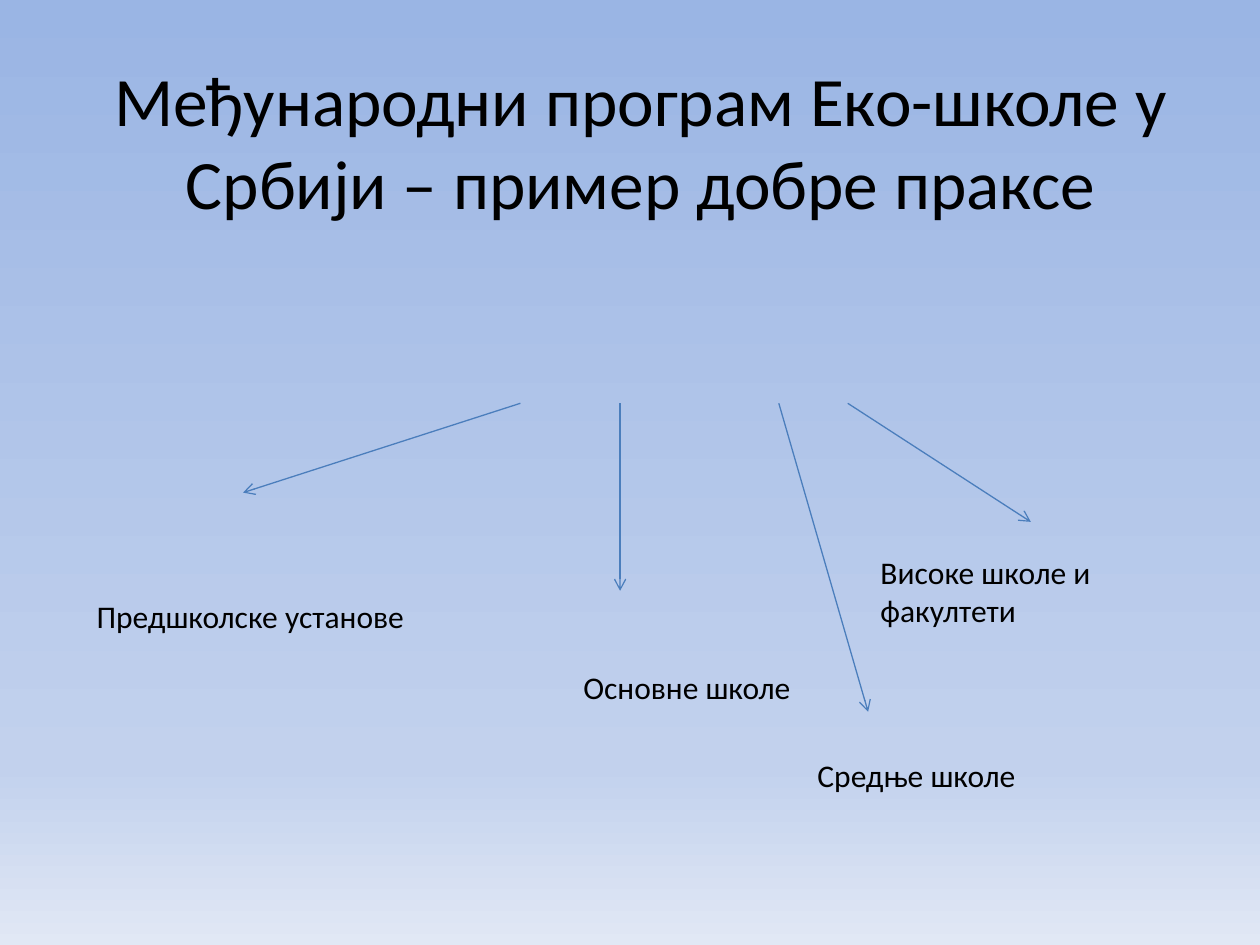
from copy import deepcopy

from lxml.etree import SubElement
from pptx import Presentation
from pptx.dml.color import RGBColor
from pptx.enum.shapes import MSO_CONNECTOR
from pptx.enum.text import MSO_ANCHOR, MSO_AUTO_SIZE, PP_ALIGN
from pptx.oxml.ns import qn
from pptx.util import Cm, Pt

BLACK = RGBColor(0x00, 0x00, 0x00)
ARROW_BLUE = RGBColor(0x4B, 0x7E, 0xBC)
BACKGROUND_STOPS = [
    (0, RGBColor(0x9A, 0xB5, 0xE4)),
    (0.81, RGBColor(0xC2, 0xD1, 0xED)),
    (1, RGBColor(0xE1, 0xE8, 0xF5)),
]
ARROWS_TOP = 8.13

# Label, its left, top, width, height and wrapping; arrow start x, end x, end y (cm)
SCHOOL_TYPES = [
    ("Предшколске установе", (1.7, 11.91, 6.78, 1.02), False, (10.49, 4.9, 9.93)),
    ("Основне школе", (11.51, 13.34, 4.72, 1.02), False, (12.5, 12.5, 11.91)),
    ("Средње школе", (16.23, 15.11, 4.55, 1.02), False, (15.7, 17.5, 14.35)),
    ("Високе школе и факултети", (17.5, 11.02, 6.81, 1.8), True, (17.09, 20.78, 10.52)),
]


class SlideBuilder:
    font_name = "Calibri"
    title_size = Pt(39.6)
    label_size = Pt(18)
    line_width = Pt(0.75)

    def __init__(self, slide):
        self.slide = slide

    def background(self, stops):
        fill = self.slide.background.fill
        fill.gradient()
        fill.gradient_angle = 270
        stop_list = self.slide.element.find(".//" + qn("a:gsLst"))
        while len(stop_list) < len(stops):
            stop_list.append(deepcopy(stop_list[-1]))
        for stop, (position, color) in zip(fill.gradient_stops, stops):
            stop.position = position
            stop.color.rgb = color

    def place(self, shape, left, top, width, height):
        shape.left, shape.top = Cm(left), Cm(top)
        shape.width, shape.height = Cm(width), Cm(height)

    def run(self, paragraph, text, size):
        run = paragraph.add_run()
        run.text = text
        run.font.name = self.font_name
        run.font.size = size
        run.font.color.rgb = BLACK

    def title(self, text, box):
        title = self.slide.shapes.title
        self.place(title, *box)
        frame = title.text_frame
        frame.word_wrap = True
        frame.auto_size = MSO_AUTO_SIZE.NONE
        frame.vertical_anchor = MSO_ANCHOR.MIDDLE
        paragraph = frame.paragraphs[0]
        paragraph.alignment = PP_ALIGN.CENTER
        self.run(paragraph, text, self.title_size)

    def label(self, text, box, wrap):
        frame = self.slide.shapes.add_textbox(*map(Cm, box)).text_frame
        frame.word_wrap = wrap
        frame.auto_size = MSO_AUTO_SIZE.SHAPE_TO_FIT_TEXT
        self.run(frame.paragraphs[0], text, self.label_size)

    def arrow(self, start_x, start_y, end_x, end_y):
        connector = self.slide.shapes.add_connector(
            MSO_CONNECTOR.STRAIGHT, Cm(start_x), Cm(start_y), Cm(end_x), Cm(end_y)
        )
        connector.line.color.rgb = ARROW_BLUE
        connector.line.width = self.line_width
        properties = connector.element.spPr
        SubElement(properties.find(qn("a:ln")), qn("a:tailEnd"), type="arrow")
        SubElement(properties, qn("a:effectLst"))


def main():
    presentation = Presentation()
    presentation.slide_width, presentation.slide_height = Cm(25.4), Cm(19.05)
    title_only = presentation.slide_layouts.get_by_name("Title Only")
    builder = SlideBuilder(presentation.slides.add_slide(title_only))
    builder.background(BACKGROUND_STOPS)
    builder.title(
        "Међународни програм Еко-школе у Србији – пример добре праксе",
        (1.7, 0.33, 22.43, 5),
    )
    for text, box, wrap, (start_x, end_x, end_y) in SCHOOL_TYPES:
        builder.arrow(start_x, ARROWS_TOP, end_x, end_y)
        builder.label(text, box, wrap)
    presentation.save("out.pptx")


if __name__ == "__main__":
    main()
